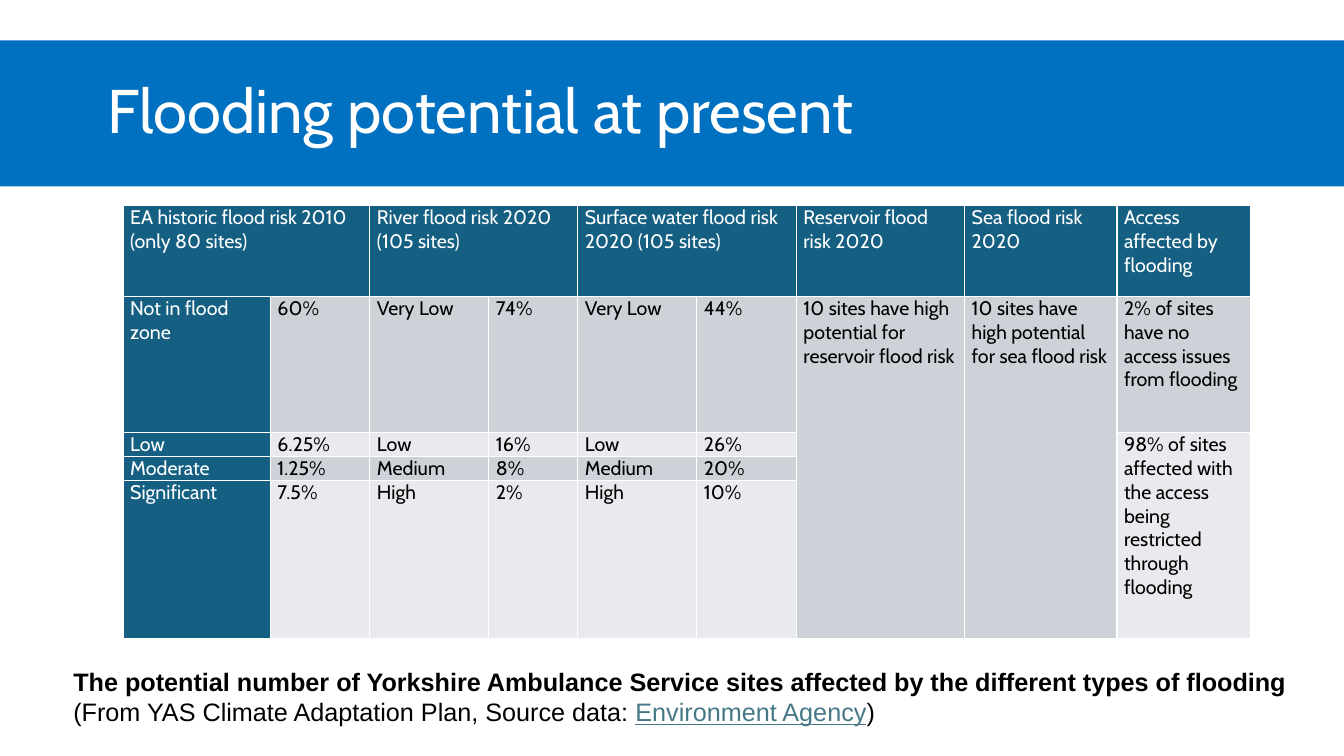
from pptx import Presentation
from pptx.dml.color import RGBColor
from pptx.enum.shapes import MSO_SHAPE as Shape
from pptx.enum.text import MSO_ANCHOR as Anchor, PP_ALIGN as Align
from pptx.oxml import parse_xml
from pptx.oxml.ns import nsdecls
from pptx.util import Cm, Pt

WHITE, BLACK, BLUE, TEAL = "FFFFFF", "000000", "0070C0", "156082"
LINK, DARK_BAND, LIGHT_BAND = "467886", "CCD2D8", "E8EAED"

COLUMN_WIDTHS = [3.71, 2.51, 3, 2.24, 3, 2.51, 4.24, 3.84, 3.38]
ROW_HEIGHTS = [2.29, 3.43, 0.56, 0.56, 3.99]
RISKS = [
    ["EA historic flood risk 2010 (only 80 sites)", "",
     "River flood risk 2020\n(105 sites)", "",
     "Surface water flood risk 2020 (105 sites)", "",
     "Reservoir flood risk 2020", "Sea flood risk 2020",
     "Access affected by flooding"],
    ["Not in flood zone", "60%", "Very Low", "74%", "Very Low", "44%",
     "10 sites have high potential for reservoir flood risk",
     "10 sites have high potential for sea flood risk",
     "2% of sites have no access issues from flooding"],
    ["Low", "6.25%", "Low", "16%", "Low", "26%", "", "",
     "98% of sites affected with the access being restricted through flooding"],
    ["Moderate", "1.25%", "Medium", "8%", "Medium", "20%", "", "", ""],
    ["Significant", "7.5%", "High", "2%", "High", "10%", "", "", ""],
]
# First and last cell of each merged area, as (row, column)
MERGES = [((0, 0), (0, 1)), ((0, 2), (0, 3)), ((0, 4), (0, 5)),
          ((1, 6), (4, 6)), ((1, 7), (4, 7)), ((2, 8), (4, 8))]


def color(value):
    return RGBColor.from_string(value)


def add_span(para, text, font, size, tint, bold=False, underline=False):
    span = para.add_run()
    span.text = text
    span.font.name, span.font.size = font, Pt(size)
    span.font.bold, span.font.underline = bold, underline
    span.font.color.rgb = color(tint)


def add_title_band(page, left, top, width, height):
    band = page.shapes.add_shape(
        Shape.RECTANGLE, Cm(left), Cm(top), Cm(width), Cm(height))
    band.shadow.inherit = False
    band.fill.solid()
    band.fill.fore_color.rgb = color(BLUE)
    band.line.fill.background()
    frame = band.text_frame
    frame.word_wrap = True
    frame.vertical_anchor = Anchor.MIDDLE
    frame.margin_left = Cm(2.7)
    para = frame.paragraphs[0]
    para.alignment = Align.LEFT
    para.line_spacing = 0.9
    add_span(para, "Flooding potential at present", "Cabin", 44, WHITE)


def add_borders(cell):
    properties = cell._tc.get_or_add_tcPr()
    for side in "LRTB":
        properties.append(parse_xml(
            f'<a:ln{side} {nsdecls("a")} w="12700"><a:solidFill>'
            f'<a:srgbClr val="{WHITE}"/></a:solidFill></a:ln{side}>'))


def fill_cell(cell, text, fill, tint):
    add_borders(cell)
    cell.fill.solid()
    cell.fill.fore_color.rgb = color(fill)
    cell.margin_left = cell.margin_right = Cm(0.18)
    cell.margin_top = cell.margin_bottom = 0
    frame = cell.text_frame
    for index, line in enumerate(text.split("\n") if text else []):
        para = frame.add_paragraph() if index else frame.paragraphs[0]
        add_span(para, line, "Cabin", 14, tint)


def add_risk_table(page, left, top):
    table = page.shapes.add_table(
        len(ROW_HEIGHTS), len(COLUMN_WIDTHS), Cm(left), Cm(top),
        Cm(sum(COLUMN_WIDTHS)), Cm(sum(ROW_HEIGHTS))).table
    table.first_row = table.horz_banding = False
    for column, width in zip(table.columns, COLUMN_WIDTHS):
        column.width = Cm(width)
    for row, height in zip(table.rows, ROW_HEIGHTS):
        row.height = Cm(height)
    for (first, last) in MERGES:
        table.cell(*first).merge(table.cell(*last))
    for r, texts in enumerate(RISKS):
        for c, text in enumerate(texts):
            if r == 0 or c == 0:
                fill, tint = TEAL, WHITE
            else:
                fill, tint = (DARK_BAND if r % 2 else LIGHT_BAND), BLACK
            fill_cell(table.cell(r, c), text, fill, tint)


def add_caption(page, left, top, width, height):
    box = page.shapes.add_textbox(Cm(left), Cm(top), Cm(width), Cm(height))
    box.text_frame.word_wrap = True
    para = box.text_frame.paragraphs[0]
    add_span(para, "The potential number of Yorkshire Ambulance Service sites "
             "affected by the different types of flooding",
             "Arial", 18, BLACK, bold=True)
    add_span(para, " (From YAS Climate Adaptation Plan, Source data: ",
             "Arial", 18, BLACK)
    add_span(para, "Environment Agency", "Arial", 18, LINK, underline=True)
    add_span(para, ")", "Arial", 18, BLACK)


def main():
    deck = Presentation()
    deck.slide_width, deck.slide_height = Cm(33.87), Cm(19.05)
    page = deck.slides.add_slide(deck.slide_layouts[6])
    add_risk_table(page, 3.1, 5.18)
    add_title_band(page, 0, 1.02, 34.57, 3.68)
    add_caption(page, 1.6, 16.66, 31.6, 1.8)
    deck.save("out.pptx")


if __name__ == "__main__":
    main()
